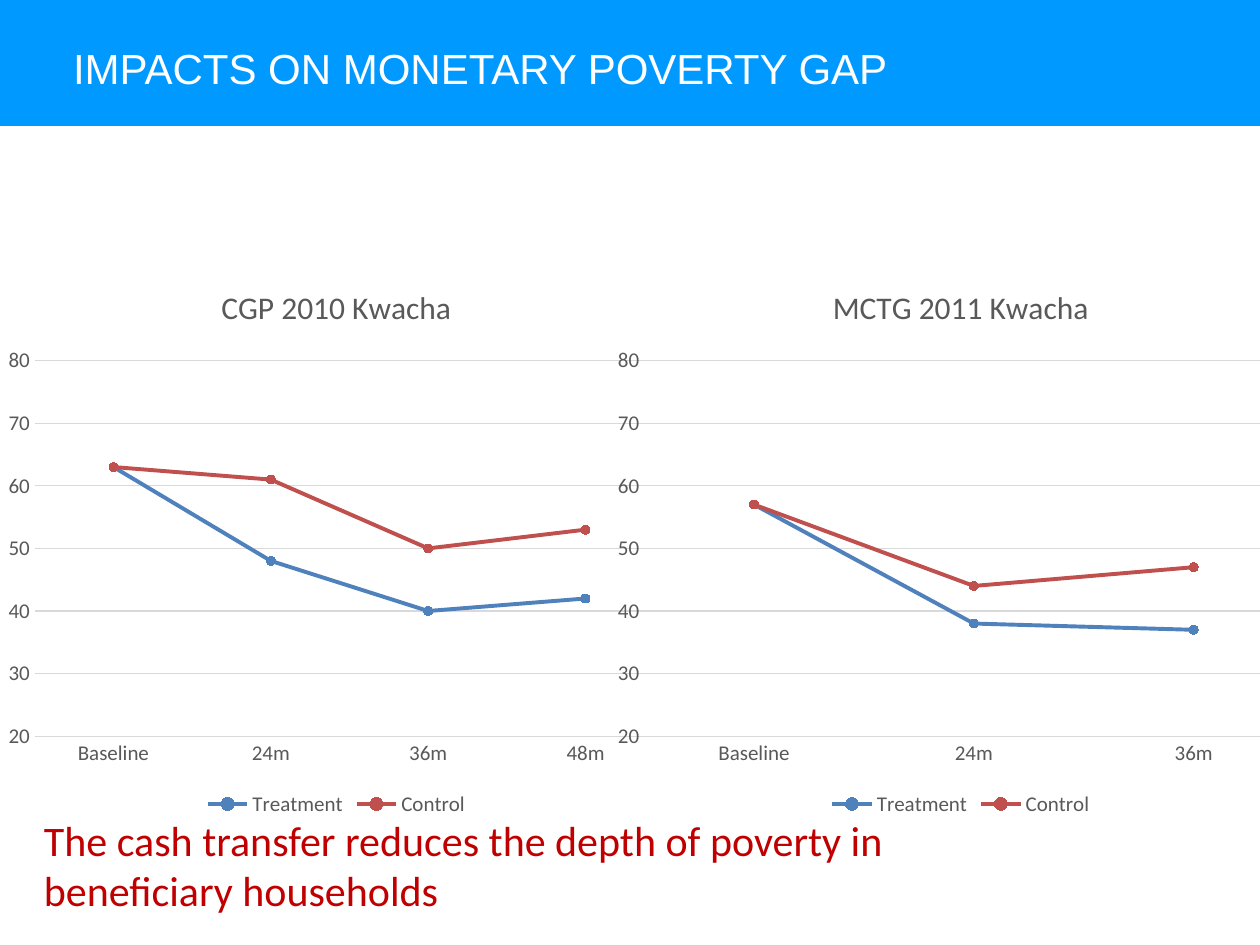
from pptx import Presentation
from pptx.chart.data import CategoryChartData
from pptx.dml.color import RGBColor
from pptx.enum.chart import XL_CHART_TYPE, XL_LEGEND_POSITION, XL_MARKER_STYLE, XL_TICK_MARK
from pptx.enum.shapes import MSO_SHAPE
from pptx.enum.text import MSO_ANCHOR, MSO_AUTO_SIZE, PP_ALIGN
from pptx.util import Inches, Pt

LINE_MARKERS = XL_CHART_TYPE.LINE_MARKERS
BOTTOM = XL_LEGEND_POSITION.BOTTOM
CIRCLE = XL_MARKER_STYLE.CIRCLE
NO_TICK = XL_TICK_MARK.NONE
RECTANGLE = MSO_SHAPE.RECTANGLE
MIDDLE = MSO_ANCHOR.MIDDLE
FIXED = MSO_AUTO_SIZE.NONE
LEFT = PP_ALIGN.LEFT

WIDTH, HEIGHT = 10, 7.5
COLUMNS, ROWS = 100, 75
COLORS = {
    "band": "0099FF",
    "white": "FFFFFF",
    "message": "C00000",
    "label": "595959",
    "grid": "D9D9D9",
    "Treatment": "4F81BD",
    "Control": "C0504D",
}
FRAME_FORMAT = {"word_wrap": True, "auto_size": FIXED, "vertical_anchor": MIDDLE}
AXIS_FORMAT = {"major_tick_mark": NO_TICK, "minor_tick_mark": NO_TICK}
SCALE_FORMAT = {
    "minimum_scale": 20,
    "maximum_scale": 80,
    "major_unit": 10,
    "has_major_gridlines": True,
}
LEGEND_FORMAT = {"position": BOTTOM, "include_in_layout": False}
MARKER_FORMAT = {"style": CIRCLE, "size": 5}

CHARTS = [
    {
        "title": "CGP 2010 Kwacha",
        "box": (-0.4, 20.8, 54.2, 44.4),
        "categories": ["Baseline", "24m", "36m", "48m"],
        "series": {"Treatment": [63, 48, 40, 42], "Control": [63, 61, 50, 53]},
    },
    {
        "title": "MCTG 2011 Kwacha",
        "box": (47.9, 20.8, 56.7, 44.4),
        "categories": ["Baseline", "24m", "36m"],
        "series": {"Treatment": [57, 38, 37], "Control": [57, 44, 47]},
    },
]


def apply(target, values):
    for name, value in values.items():
        setattr(target, name, value)


def color(name):
    return RGBColor.from_string(COLORS[name])


class SlideBuilder:
    def __init__(self, slide):
        self.slide = slide

    def box(self, column, row, columns, rows):
        return (
            Inches(column * WIDTH / COLUMNS),
            Inches(row * HEIGHT / ROWS),
            Inches(columns * WIDTH / COLUMNS),
            Inches(rows * HEIGHT / ROWS),
        )

    def font(self, font, size, color_name, name="Calibri"):
        apply(font, {"size": Pt(size), "name": name, "bold": False})
        font.color.rgb = color(color_name)

    def line(self, line, color_name, width):
        line.color.rgb = color(color_name)
        line.width = Pt(width)

    def band(self, *cells):
        shape = self.slide.shapes.add_shape(RECTANGLE, *self.box(*cells))
        shape.shadow.inherit = False
        shape.fill.solid()
        shape.fill.fore_color.rgb = color("band")
        shape.line.fill.background()
        self.slide.shapes.element.insert(2, shape.element)

    def text(self, shape, text, color_name, font_name):
        frame = shape.text_frame
        frame.text = text
        apply(frame, FRAME_FORMAT)
        paragraph = frame.paragraphs[0]
        paragraph.alignment = LEFT
        self.font(paragraph.runs[0].font, 24, color_name, font_name)

    def title(self, text, *cells):
        shape = self.slide.shapes.title
        apply(shape, dict(zip(("left", "top", "width", "height"), self.box(*cells))))
        self.text(shape, text, "white", "Arial")

    def message(self, text, *cells):
        shape = self.slide.shapes.add_textbox(*self.box(*cells))
        self.text(shape, text, "message", "Calibri")

    def chart(self, title, box, categories, series):
        data = CategoryChartData()
        data.categories = categories
        for name, values in series.items():
            data.add_series(name, values)
        chart = self.slide.shapes.add_chart(LINE_MARKERS, *self.box(*box), data).chart
        chart.font.size = Pt(10)
        chart.font.name = "Calibri"

        chart.has_title = True
        chart.chart_title.include_in_layout = False
        frame = chart.chart_title.text_frame
        frame.text = title
        self.font(frame.paragraphs[0].runs[0].font, 18, "label")

        chart.has_legend = True
        apply(chart.legend, LEGEND_FORMAT)
        self.font(chart.legend.font, 12, "label")

        for axis in (chart.category_axis, chart.value_axis):
            apply(axis, AXIS_FORMAT)
            self.font(axis.tick_labels.font, 12, "label")
        self.line(chart.category_axis.format.line, "grid", 0.75)
        apply(chart.value_axis, SCALE_FORMAT)
        chart.value_axis.format.line.fill.background()
        self.line(chart.value_axis.major_gridlines.format.line, "grid", 0.75)

        chart.plots[0].vary_by_categories = False
        for item in chart.plots[0].series:
            item.smooth = False
            self.line(item.format.line, item.name, 2.25)
            apply(item.marker, MARKER_FORMAT)
            item.marker.format.fill.solid()
            item.marker.format.fill.fore_color.rgb = color(item.name)
            self.line(item.marker.format.line, item.name, 0.75)


def main():
    presentation = Presentation()
    presentation.slide_width = Inches(WIDTH)
    presentation.slide_height = Inches(HEIGHT)
    title_only = presentation.slide_layouts[5]
    builder = SlideBuilder(presentation.slides.add_slide(title_only))
    builder.band(0, 0, COLUMNS, 10)
    builder.title("IMPACTS ON MONETARY POVERTY GAP", 4.8, 2.6, 75.3, 5.5)
    for chart in CHARTS:
        builder.chart(**chart)
    builder.message(
        "The cash transfer reduces the depth of poverty in beneficiary households",
        2.5, 65.3, 83.2, 6.7,
    )
    presentation.save("out.pptx")


if __name__ == "__main__":
    main()
